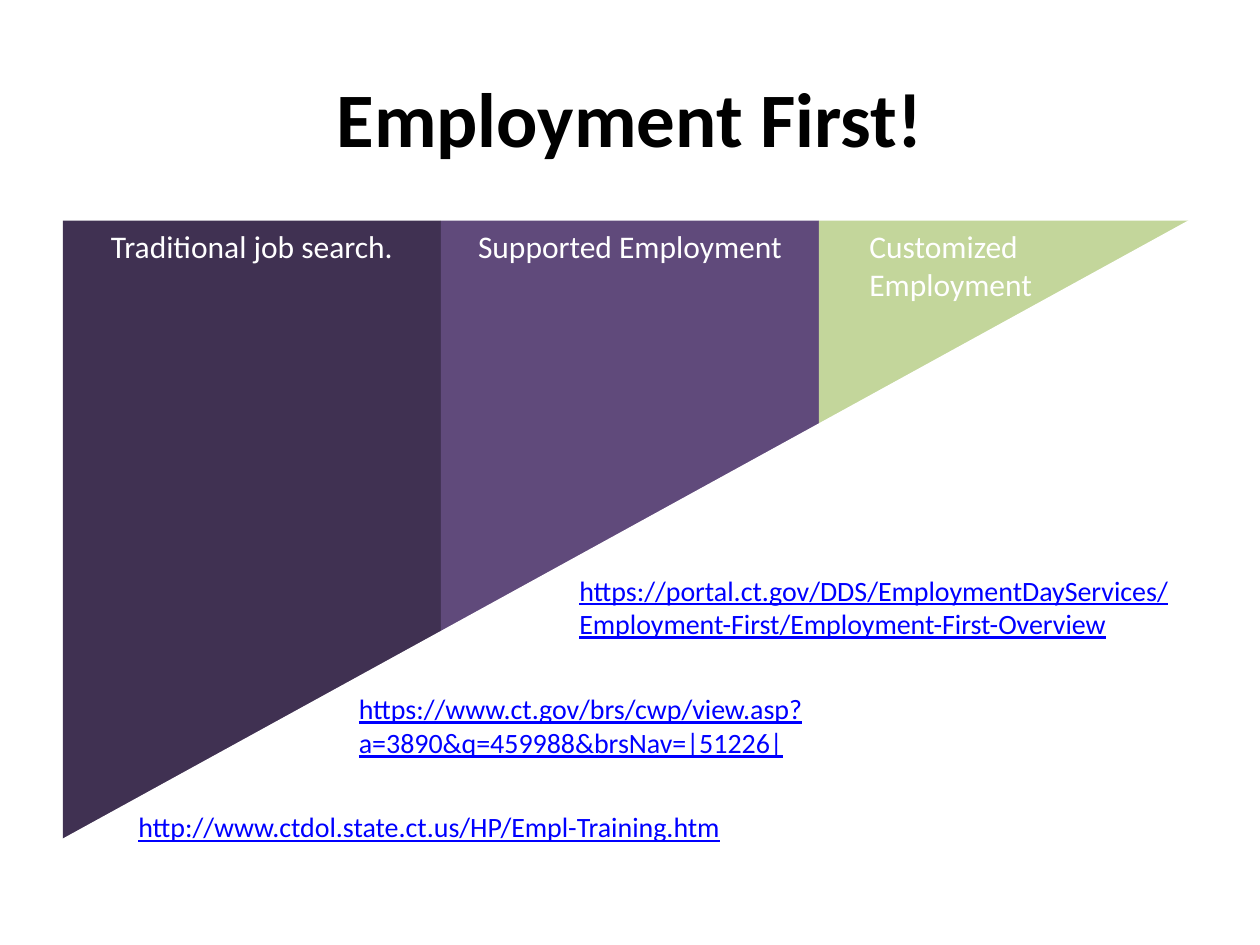
from dataclasses import dataclass

from pptx import Presentation
from pptx.dml.color import RGBColor
from pptx.enum.shapes import MSO_SHAPE as Shape
from pptx.enum.text import MSO_ANCHOR as Anchor, PP_ALIGN as Align
from pptx.util import Inches, Pt


@dataclass(frozen=True)
class Theme:
    font: str = "Calibri"
    black: str = "000000"
    white: str = "FFFFFF"
    link: str = "0000FF"
    traditional: str = "403152"
    supported: str = "604A7B"
    customized: str = "C3D69B"
    title_size: int = 44
    label_size: int = 18
    link_size: int = 16


THEME = Theme()
BAND_LEFT, BAND_TOP, BAND_WIDTH, BAND_HEIGHT = 0.5, 1.75, 3, 4.92
BANDS = [
    (["Traditional job search."], THEME.traditional, {"align": Align.CENTER}),
    (["Supported Employment"], THEME.supported, {"align": Align.CENTER}),
    (["Customized", "Employment"], THEME.customized, {"inset": 0.4}),
]
LINK_LEFT, LINK_TOP, LINK_STEP_X, LINK_STEP_Y = 4.5, 4.5, -1.75, 0.94
LINKS = [
    ("https://portal.ct.gov/DDS/EmploymentDayServices/Employment-First/Employment-First-Overview", 0.64),
    ("https://www.ct.gov/brs/cwp/view.asp?a=3890&q=459988&brsNav=|51226|", 0.64),
    ("http://www.ctdol.state.ct.us/HP/Empl-Training.htm", 0.37),
]


def write_text(box, lines, *, size, color, align=Align.LEFT, anchor=Anchor.TOP,
               bold=False, underline=False, inset=0.1):
    frame = box.text_frame
    frame.word_wrap = True
    frame.vertical_anchor = anchor
    frame.margin_left = Inches(inset)
    for index, line in enumerate(lines):
        para = frame.add_paragraph() if index else frame.paragraphs[0]
        para.alignment = align
        span = para.add_run()
        span.text = line
        span.font.name = THEME.font
        span.font.size = Pt(size)
        span.font.bold = bold
        span.font.underline = underline
        span.font.color.rgb = RGBColor.from_string(color)


def add_title(page, text):
    title = page.shapes.title
    title.left, title.top = Inches(0.5), Inches(0.3)
    title.width, title.height = Inches(9), Inches(1.25)
    write_text(title, [text], size=THEME.title_size, color=THEME.black,
               align=Align.CENTER, anchor=Anchor.MIDDLE, bold=True)


def add_filled_shape(page, kind, left, top, width, height, color):
    shape = page.shapes.add_shape(kind, Inches(left), Inches(top), Inches(width), Inches(height))
    shape.shadow.inherit = False
    shape.fill.solid()
    shape.fill.fore_color.rgb = RGBColor.from_string(color)
    shape.line.fill.background()
    return shape


def add_bands(page):
    for index, (lines, color, layout) in enumerate(BANDS):
        band = add_filled_shape(page, Shape.RECTANGLE, BAND_LEFT + index * BAND_WIDTH,
                                BAND_TOP, BAND_WIDTH, BAND_HEIGHT, color)
        write_text(band, lines, size=THEME.label_size, color=THEME.white, **layout)


def add_diagonal_cut(page):
    cut = add_filled_shape(page, Shape.ISOSCELES_TRIANGLE, 2.42, -0.42, 5.08, 9.25, THEME.white)
    cut.adjustments[0] = 0
    cut.rotation = 270


def add_links(page):
    for index, (address, height) in enumerate(LINKS):
        box = page.shapes.add_textbox(Inches(LINK_LEFT + index * LINK_STEP_X),
                                      Inches(LINK_TOP + index * LINK_STEP_Y),
                                      Inches(5), Inches(height))
        write_text(box, [address], size=THEME.link_size, color=THEME.link, underline=True)


def main():
    deck = Presentation()
    deck.slide_width, deck.slide_height = Inches(10), Inches(7.5)
    page = deck.slides.add_slide(deck.slide_layouts[5])
    add_title(page, "Employment First!")
    add_bands(page)
    add_diagonal_cut(page)
    add_links(page)
    deck.save("out.pptx")


if __name__ == "__main__":
    main()
